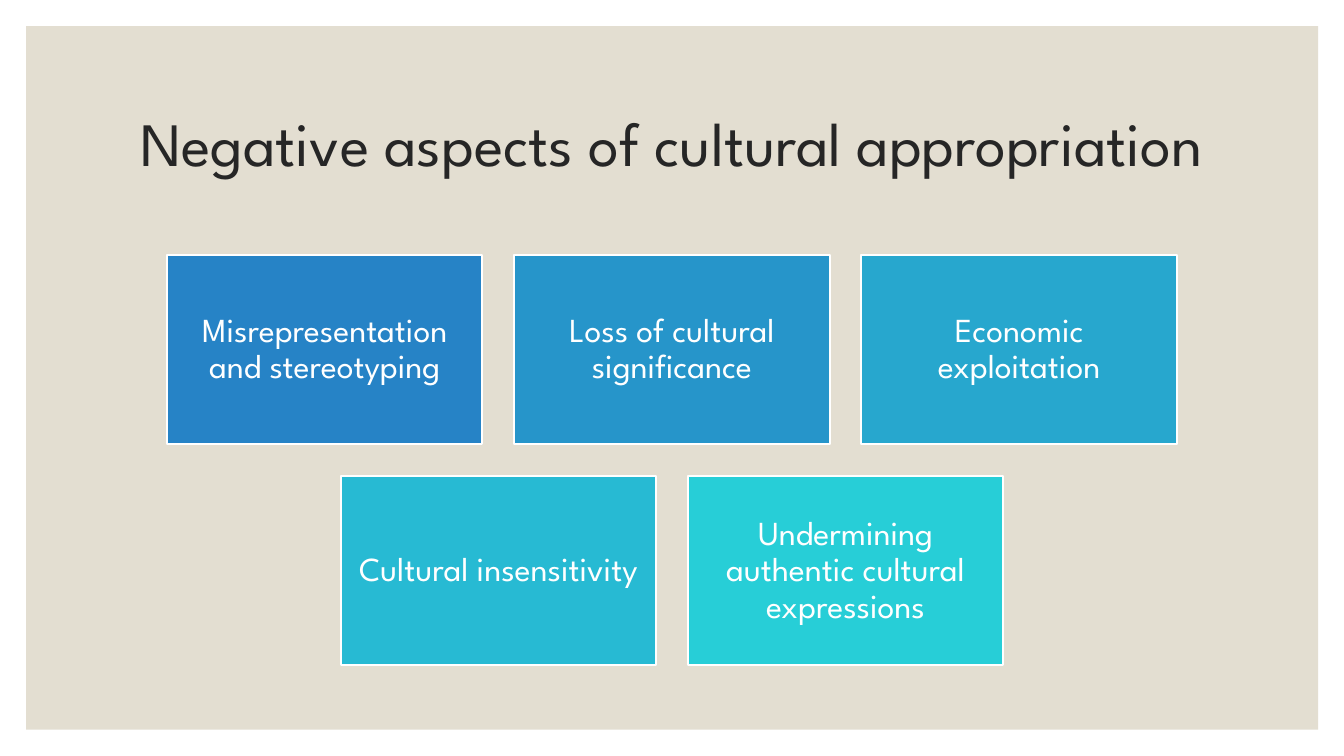
import pptx
import pptx.dml.color
import pptx.enum.shapes
import pptx.enum.text
import pptx.util

RGBColor = pptx.dml.color.RGBColor
Cm = pptx.util.Cm

WHITE = RGBColor(0xFF, 0xFF, 0xFF)
SAND = RGBColor(0xE3, 0xDE, 0xD1)
INK = RGBColor(0x26, 0x26, 0x26)
BLUE = RGBColor(0x26, 0x83, 0xC6)
AZURE = RGBColor(0x26, 0x95, 0xCA)
SKY = RGBColor(0x27, 0xA7, 0xCE)
TEAL = RGBColor(0x27, 0xBA, 0xD3)
AQUA = RGBColor(0x27, 0xCE, 0xD7)

SLIDE_W, SLIDE_H = 33.87, 19.05
CARD_W, CARD_H, GAP = 7.95, 4.77, 0.8
CARDS_TOP = 6.43

ROWS = [
    [("Misrepresentation and stereotyping", BLUE),
     ("Loss of cultural significance", AZURE),
     ("Economic exploitation", SKY)],
    [("Cultural insensitivity", TEAL),
     ("Undermining authentic cultural expressions", AQUA)],
]


class Deck:
    """Hold the text style and the current slide, and add its elements."""

    font = "League Spartan"

    def __init__(self, prs):
        self.s = prs.slides.add_slide(prs.slide_layouts[6])

    def set_text(self, sp, text, size, color, inset):
        tf = sp.text_frame
        tf.word_wrap = True
        tf.vertical_anchor = pptx.enum.text.MSO_ANCHOR.MIDDLE
        tf.margin_left = tf.margin_right = Cm(0.25)
        tf.margin_top = tf.margin_bottom = Cm(inset)
        tf.text = text
        p = tf.paragraphs[0]
        p.alignment = pptx.enum.text.PP_ALIGN.CENTER
        p.line_spacing = 0.9
        r = p.runs[0]
        r.font.name = self.font
        r.font.size = pptx.util.Pt(size)
        r.font.color.rgb = color

    def rect(self, x, y, w, h, fill):
        sp = self.s.shapes.add_shape(
            pptx.enum.shapes.MSO_SHAPE.RECTANGLE, Cm(x), Cm(y), Cm(w), Cm(h))
        sp.shadow.inherit = False
        sp.fill.solid()
        sp.fill.fore_color.rgb = fill
        sp.line.fill.background()
        return sp

    def title(self, x, y, w, h, text):
        sp = self.s.shapes.add_textbox(Cm(x), Cm(y), Cm(w), Cm(h))
        self.set_text(sp, text, 44, INK, 0.13)

    def card(self, x, y, text, fill):
        sp = self.rect(x, y, CARD_W, CARD_H, fill)
        sp.line.color.rgb = WHITE
        sp.line.width = pptx.util.Pt(1.5)
        self.set_text(sp, text, 24, WHITE, 0.25)


def main():
    prs = pptx.Presentation()
    prs.slide_width, prs.slide_height = Cm(SLIDE_W), Cm(SLIDE_H)
    deck = Deck(prs)
    deck.rect(0.66, 0.66, 32.56, 17.73, SAND)
    deck.title(2.97, 1.78, 27.94, 3.81,
               "Negative aspects of cultural appropriation")
    for i, row in enumerate(ROWS):
        row_w = len(row) * (CARD_W + GAP) - GAP
        left = (SLIDE_W - row_w) / 2
        for j, (text, fill) in enumerate(row):
            deck.card(left + j * (CARD_W + GAP),
                      CARDS_TOP + i * (CARD_H + GAP), text, fill)
    prs.save("out.pptx")


if __name__ == "__main__":
    main()
